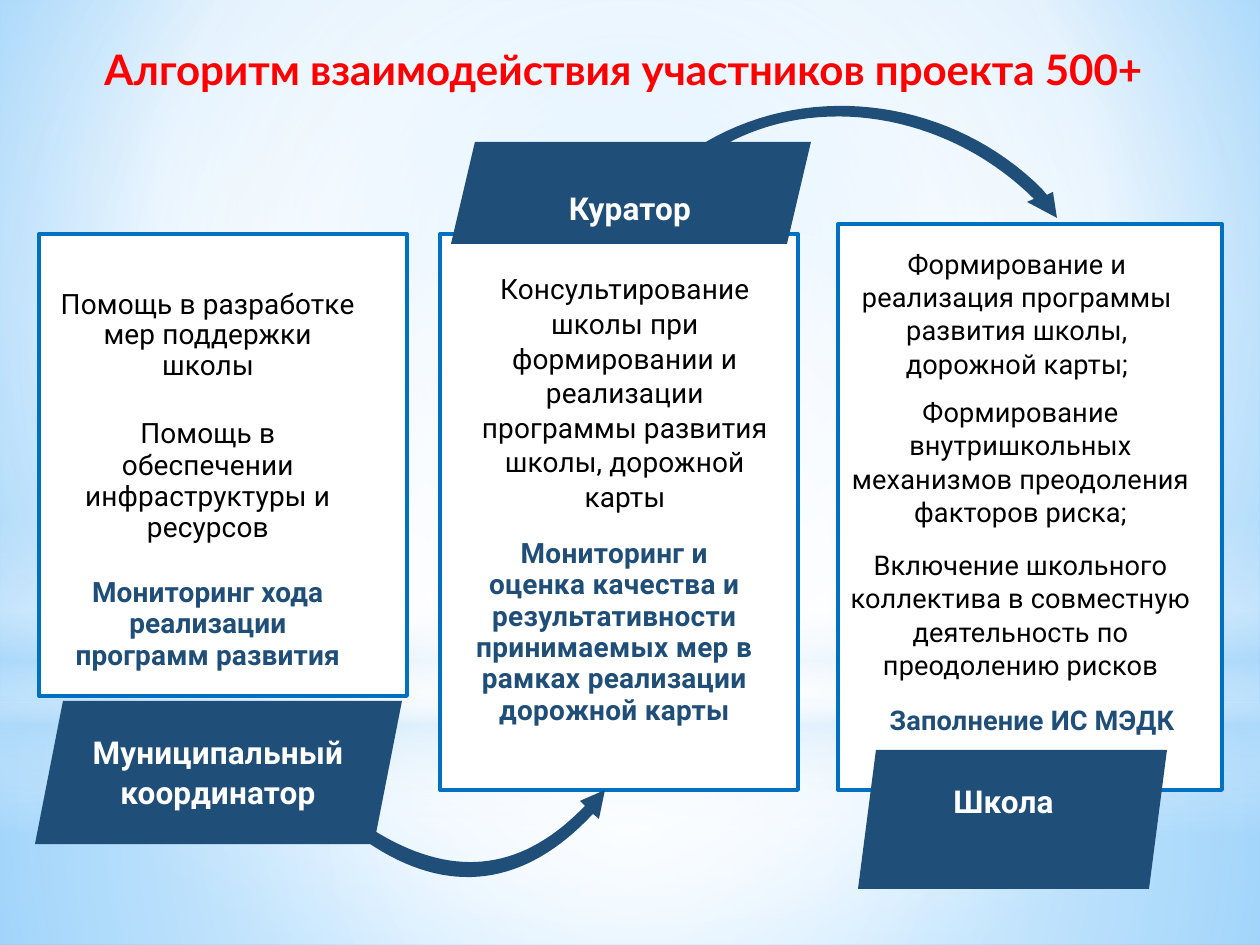
from dataclasses import dataclass

from lxml import etree
from pptx import Presentation, util as u
from pptx.dml.color import RGBColor
from pptx.enum import shapes, text
from pptx.oxml import ns

SCALE = 914400 / 126


@dataclass(frozen=True)
class Theme:
    title: str = "FF0000"
    navy: str = "1F4E79"
    border: str = "0070C0"
    white: str = "FFFFFF"
    black: str = "000000"
    mist: str = "B4DCFA"
    sky: str = "9ED5FF"
    azure: str = "5BB9FF"
    title_font: str = "Lato"
    body_font: str = "Roboto"
    title_size: float = 24
    label_size: float = 18
    body_size: float = 16
    school_size: float = 15.5


@dataclass(frozen=True)
class Para:
    spans: tuple
    color: str
    bold: bool = False
    leading: object = None
    before: float = 0


def px(value):
    return u.Emu(round(value * SCALE))


def curve(p0, p1, p2, p3, steps=32):
    def point(t):
        weights = ((1 - t) ** 3, 3 * t * (1 - t) ** 2, 3 * t * t * (1 - t), t ** 3)
        return tuple(sum(w * p[axis] for w, p in zip(weights, (p0, p1, p2, p3)))
                     for axis in (0, 1))
    return [point(step / steps) for step in range(steps + 1)]


class Slide:
    def __init__(self, deck, theme):
        self.theme = theme
        self.page = deck.slides.add_slide(deck.slide_layouts[6])

    def gradient(self, fill, element, stops, focus=None):
        fill.gradient()
        node = element.find(".//" + ns.qn("a:gradFill"))
        for child in list(node):
            node.remove(child)
        stop_list = etree.SubElement(node, ns.qn("a:gsLst"))
        for position, color, alpha in stops:
            stop = etree.SubElement(stop_list, ns.qn("a:gs"), pos=str(position * 1000))
            tint = etree.SubElement(stop, ns.qn("a:srgbClr"), val=color)
            etree.SubElement(tint, ns.qn("a:alpha"), val=str(alpha * 1000))
        if focus:
            shade = etree.SubElement(node, ns.qn("a:path"), path="circle")
            edges = {side: str(share * 1000) for side, share in zip("ltrb", focus)}
            etree.SubElement(shade, ns.qn("a:fillToRect"), **edges)
        else:
            etree.SubElement(node, ns.qn("a:lin"), ang="5400000", scaled="0")

    def backdrop(self, stops, focus):
        self.gradient(self.page.background.fill, self.page.element, stops, focus)

    def shape(self, kind, x, y, w, h):
        shape = self.page.shapes.add_shape(kind, px(x), px(y), px(w), px(h))
        shape.shadow.inherit = False
        shape.line.fill.background()
        return shape

    def glow(self, kind, y, h, stops, focus=None):
        shape = self.shape(kind, 0, y, 1260, h)
        self.gradient(shape.fill, shape.element, stops, focus)

    def paint(self, shape, color):
        shape.fill.solid()
        shape.fill.fore_color.rgb = RGBColor.from_string(color)

    def panel(self, x, y, w, h):
        box = self.shape(shapes.MSO_SHAPE.RECTANGLE, x, y, w, h)
        self.paint(box, self.theme.white)
        box.line.color.rgb = RGBColor.from_string(self.theme.border)
        box.line.width = u.Pt(2.25)

    def banner(self, x, y, w, h, slant):
        box = self.shape(shapes.MSO_SHAPE.PARALLELOGRAM, x, y, w, h)
        box.adjustments[0] = slant / min(w, h)
        self.paint(box, self.theme.navy)

    def outline(self, points):
        start, *rest = [(px(x), px(y)) for x, y in points]
        builder = self.page.shapes.build_freeform(*start)
        builder.add_line_segments(rest, close=True)
        shape = builder.convert_to_shape()
        shape.shadow.inherit = False
        shape.line.fill.background()
        self.paint(shape, self.theme.navy)

    def text(self, x, y, w, h, size, paras, insets=(0, 2), font=None, tracking=10):
        box = self.page.shapes.add_textbox(px(x), px(y), px(w), px(h))
        frame = box.text_frame
        frame.word_wrap = True
        frame.vertical_anchor = text.MSO_ANCHOR.TOP
        frame.margin_left = frame.margin_right = px(insets[0])
        frame.margin_top, frame.margin_bottom = px(insets[1]), 0
        for index, item in enumerate(paras):
            para = frame.add_paragraph() if index else frame.paragraphs[0]
            para.alignment = text.PP_ALIGN.CENTER
            para.space_before = u.Pt(item.before)
            if item.leading:
                para.line_spacing = item.leading
            for order, words in enumerate(item.spans):
                if order:
                    para.add_line_break()
                span = para.add_run()
                span.text = words
                span.font.name = font or self.theme.body_font
                span.font.size = u.Pt(size)
                span.font.bold = item.bold
                span.font.color.rgb = RGBColor.from_string(item.color)
        for props in box.element.iter(ns.qn("a:rPr")):
            props.set("spc", str(tracking))


def main():
    deck = Presentation()
    deck.slide_width, deck.slide_height = px(1260), px(945)
    theme = Theme()
    slide = Slide(deck, theme)
    white, mist, navy, black = theme.white, theme.mist, theme.navy, theme.black
    rect, oval = shapes.MSO_SHAPE.RECTANGLE, shapes.MSO_SHAPE.OVAL
    center = (50, 50, 50, 50)
    inset = (13, 6)
    first, second = u.Pt(17.3), u.Pt(17.9)

    slide.backdrop([(0, theme.sky, 100), (60, white, 100), (100, theme.azure, 100)],
                   (20, 10, 20, 60))
    slide.glow(rect, 703, 242, [(0, white, 91), (37, white, 76), (100, mist, 79)], center)
    slide.glow(rect, 0, 703, [(0, white, 89), (48, white, 62), (100, mist, 79)], center)
    slide.glow(rect, 519, 315, [(0, white, 0), (29, white, 30), (45, mist, 40),
                                (55, white, 26), (65, mist, 60), (100, white, 0)])
    slide.glow(oval, 221, 703, [(0, white, 100), (56, white, 0)], center)

    slide.text(28, 37, 1191, 79, theme.title_size,
               [Para(("Алгоритм взаимодействия участников проекта 500+",), theme.title, True)],
               inset, theme.title_font, 0)

    slide.panel(39, 234, 368, 462)
    slide.banner(35, 701, 367, 143, 28)
    slide.text(84, 731, 268, 81, theme.label_size,
               [Para((word,), white, True, before=1.2)
                for word in ("Муниципальный", "координатор")])

    slide.panel(440, 234, 358, 556)
    outer = curve((706, 142), (814, 79), (954, 101), (1042, 189))
    inner = curve((730, 142), (830, 91), (955, 120), (1034, 199))
    slide.outline([(1057, 218), (1053, 192), (1047, 195), *reversed(outer),
                   (475, 142), (451, 244), (787, 244), (811, 142),
                   *inner, (1027, 202)])
    slide.text(516, 195, 228, 33, theme.label_size,
               [Para(("Куратор",), white, True, u.Pt(15), 3.2)], (0, 6))

    slide.panel(838, 224, 384, 566)
    slide.text(848, 245, 338, 136, theme.school_size,
               [Para(("Формирование и реализация программы развития школы, дорожной карты;",),
                     black, leading=1.03, before=0.7)], (0, 1))
    slide.text(848, 393, 345, 297, theme.school_size, [
        Para(("Формирование внутришкольных механизмов преодоления факторов риска;",),
             black, leading=1.03, before=0.7),
        Para(("Включение школьного коллектива в совместную деятельность по "
              "преодолению рисков",), black, leading=1.03, before=11),
    ], (0, 1))
    slide.text(868, 701, 328, 35, theme.school_size,
               [Para(("Заполнение ИС МЭДК",), navy, True, before=1.2)])
    slide.banner(858, 750, 309, 139, 18)
    slide.text(911, 780, 185, 40, theme.label_size,
               [Para(("Школа",), white, True, before=1.2)])

    upper = curve((373, 830), (450, 878), (518, 873), (581, 810))
    lower = curve((367, 842), (449, 898), (526, 886), (593, 814))
    slide.outline([(605, 790), (580, 801), (585, 806), *reversed(upper),
                   *lower, (599, 819)])

    slide.text(44, 284, 328, 464, theme.body_size, [
        Para(("Помощь в разработке мер поддержки", "школы"), black, leading=first, before=2.9),
        Para(("Помощь в обеспечении",), black, leading=second, before=21.4),
        Para(("инфраструктуры и ресурсов",), black, leading=second),
        Para(("Мониторинг хода реализации",), navy, True, second, 19.1),
        Para(("программ развития",), navy, True, second),
    ], inset)
    slide.text(461, 265, 328, 478, theme.body_size,
               [Para(("Консультирование школы при формировании и реализации программы "
                      "развития школы, дорожной карты",), black, leading=1.03, before=0.7)],
               inset)
    slide.text(461, 532, 307, 236, theme.body_size,
               [Para(("Мониторинг и оценка качества и результативности принимаемых мер "
                      "в рамках реализации дорожной карты",), navy, True, second, 1.2)],
               inset, tracking=20)
    deck.save("out.pptx")


if __name__ == "__main__":
    main()
